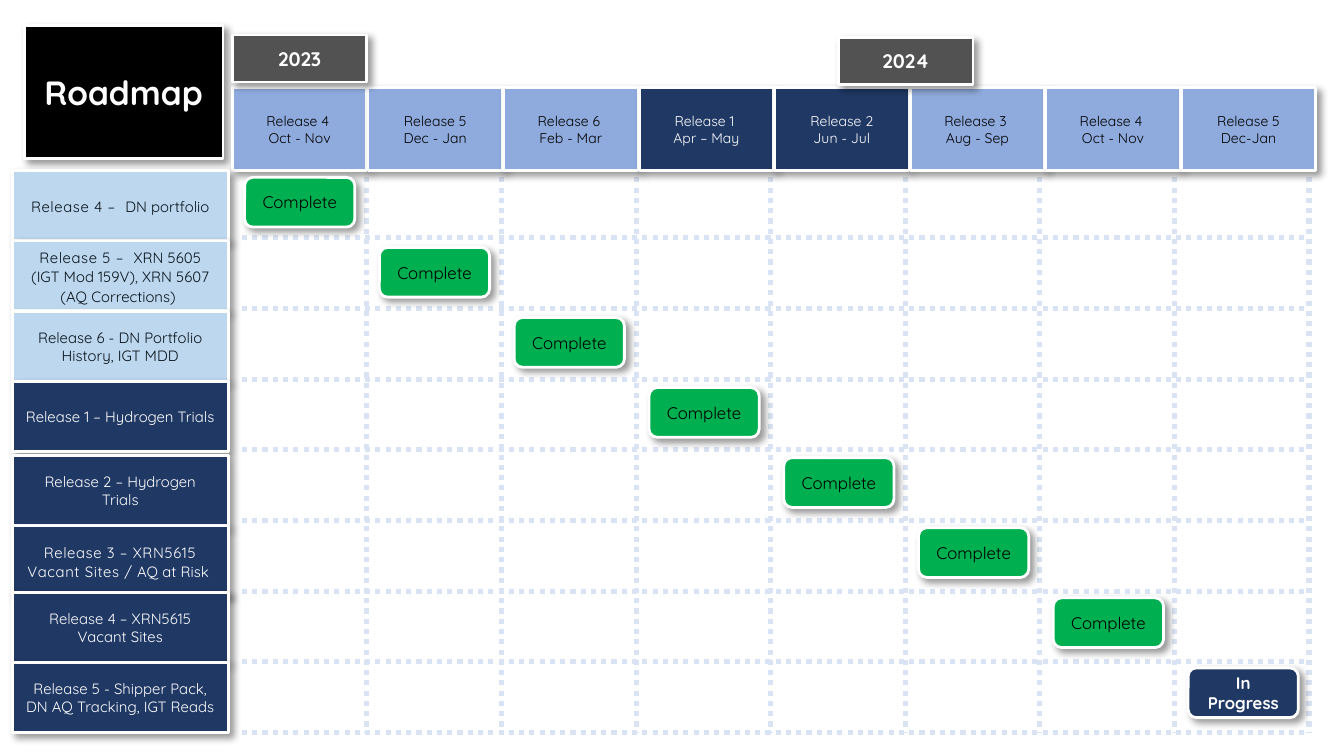
import pptx
import pptx.util
import pptx.dml.color
import pptx.enum.dml
import pptx.enum.shapes
import pptx.enum.text
import pptx.oxml
import pptx.oxml.ns
from lxml import etree

# Content
TITLE = "Roadmap"
YEARS = [("2023", 1.73, 0.26), ("2024", 6.24, 0.28)]
RELEASES = [  # heading, colour
    ("Release 4 \nOct - Nov", "blue"),
    ("Release 5\nDec - Jan", "blue"),
    ("Release 6 \nFeb - Mar", "blue"),
    ("Release 1 \nApr – May", "navy"),
    ("Release 2\nJun - Jul", "navy"),
    ("Release 3 \nAug - Sep", "blue"),
    ("Release 4 \nOct - Nov", "blue"),
    ("Release 5\nDec-Jan", "blue"),
]
WORK = [  # letter-spaced start, rest, colour, downward nudge
    ("Release 4 –  ", "DN portfolio", "sky", 0),
    ("Release 5 –  ", "XRN 5605 (IGT Mod 159V), XRN 5607 (AQ Corrections) ", "sky", 0),
    ("", "Release 6 - DN Portfolio History, IGT MDD", "sky", 0),
    ("", "Release 1 – Hydrogen Trials", "navy", 0),
    ("", "Release 2 – Hydrogen Trials", "navy", 0.03),
    ("Release 3 – XRN5615 Vacant Sites /", " AQ at Risk ", "navy", 0.03),
    ("", "Release 4 – XRN5615 Vacant Sites", "navy", 0),
    ("", "Release 5 - Shipper Pack, DN AQ Tracking, IGT Reads", "navy", 0),
]
STATUSES = ["Complete"] * 7 + ["In Progress"]

# Style
COLOURS = {
    "black": "000000", "white": "FFFFFF", "grey": "525252", "navy": "203864",
    "blue": "8FAADC", "sky": "BDD7EE", "ink": "08131B", "green": "00B050",
    "grid": "DAE3F3",
}
FONT = "Quicksand"
SHADOW = (
    '<a:outerShdw %s blurRad="50800" dist="38100" dir="2700000" algn="tl" rotWithShape="0">'
    '<a:srgbClr val="000000"><a:alpha val="40000"/></a:srgbClr></a:outerShdw>'
    % pptx.oxml.ns.nsdecls("a")
)

# Slide in 16:9
SLIDE_WIDTH = 10
SLIDE_HEIGHT = SLIDE_WIDTH * 9 / 16

# Grid: first position and even step across eight columns and rows
COUNT = len(RELEASES)
GAPS = COUNT - 1
HEADER_LEFT, HEADER_STEP = 1.73, (8.79 - 1.73) / GAPS
LABEL_TOP, LABEL_STEP = 1.27, (4.93 - 1.27) / GAPS
STATUS_LEFT, STATUS_X_STEP = 1.82, (8.84 - 1.82) / GAPS
STATUS_TOP, STATUS_Y_STEP = 1.32, (4.97 - 1.32) / GAPS
LINE_X, LINE_X_STEP = 2.73, (9.74 - 2.73) / GAPS
LINE_Y, LINE_Y_STEP = 1.77, (5.45 - 1.77) / GAPS
GRID_LEFT, GRID_TOP, GRID_RIGHT, GRID_BOTTOM = 1.8, 1.32, 9.74, 5.45

RECTANGLE = pptx.enum.shapes.MSO_SHAPE.RECTANGLE
ROUNDED = pptx.enum.shapes.MSO_SHAPE.ROUNDED_RECTANGLE


def inches(*lengths):
    return [pptx.util.Inches(length) for length in lengths]


def colour(name):
    return pptx.dml.color.RGBColor.from_string(COLOURS[name])


def style_box(shape, text, fill, size, text_colour="white", bold=False):
    """Give a box its fill, white border, shadow and centred text."""
    shape.fill.solid()
    shape.fill.fore_color.rgb = colour(fill)
    shape.line.color.rgb = colour("white")
    shape.line.width = pptx.util.Pt(1.5)
    shape.shadow.inherit = False
    effects = shape._element.spPr.find(pptx.oxml.ns.qn("a:effectLst"))
    effects.append(pptx.oxml.parse_xml(SHADOW))
    frame = shape.text_frame
    frame.text = text
    frame.word_wrap = True
    frame.auto_size = pptx.enum.text.MSO_AUTO_SIZE.NONE
    frame.vertical_anchor = pptx.enum.text.MSO_ANCHOR.MIDDLE
    for paragraph in frame.paragraphs:
        paragraph.alignment = pptx.enum.text.PP_ALIGN.CENTER
        for run in paragraph.runs:
            style_run(run, size, text_colour, bold)


def style_run(run, size, text_colour, bold=False):
    run.font.name = FONT
    run.font.size = pptx.util.Pt(size)
    run.font.bold = bold
    run.font.color.rgb = colour(text_colour)


def add_box(slide, kind, position, *style, **options):
    shape = slide.shapes.add_shape(kind, *inches(*position))
    style_box(shape, *style, **options)
    return shape


def add_grid_line(slide, *ends):
    line = slide.shapes.add_connector(
        pptx.enum.shapes.MSO_CONNECTOR.STRAIGHT, *inches(*ends))
    line.line.color.rgb = colour("grid")
    line.line.width = pptx.util.Pt(2.75)
    line.line.dash_style = pptx.enum.dml.MSO_LINE.ROUND_DOT
    etree.SubElement(line._element.spPr, pptx.oxml.ns.qn("a:effectLst"))


def add_work_label(slide, row, tracked, rest, fill, nudge):
    text_colour = "ink" if fill == "sky" else "white"
    top = LABEL_TOP + row * LABEL_STEP + nudge
    label = add_box(slide, RECTANGLE, (0.09, top, 1.61, 0.52),
                    tracked or rest, fill, 8, text_colour)
    if tracked:
        paragraph = label.text_frame.paragraphs[0]
        paragraph.line_spacing = 1.1
        paragraph.runs[0].font._element.set("spc", "30")
        run = paragraph.add_run()
        run.text = rest
        style_run(run, 8, text_colour)


def main():
    presentation = pptx.Presentation()
    presentation.slide_width, presentation.slide_height = inches(SLIDE_WIDTH, SLIDE_HEIGHT)
    slide = presentation.slides.add_slide(presentation.slide_layouts[5])

    # Title
    title = slide.shapes.title
    title.left, title.top, title.width, title.height = inches(0.18, 0.19, 1.48, 0.99)
    style_box(title, TITLE, "black", 18, bold=True)

    # Dotted grid
    for index in range(COUNT):
        x = LINE_X + index * LINE_X_STEP
        y = LINE_Y + index * LINE_Y_STEP
        add_grid_line(slide, x, GRID_TOP, x, GRID_BOTTOM)
        add_grid_line(slide, GRID_LEFT, y, GRID_RIGHT, y)

    # Release headings, then the years above them
    for column, (heading, fill) in enumerate(RELEASES):
        left = HEADER_LEFT + column * HEADER_STEP
        add_box(slide, RECTANGLE, (left, 0.65, 1, 0.62), heading, fill, 7.5,
                "white" if fill == "navy" else "black")
    for year, left, top in YEARS:
        add_box(slide, RECTANGLE, (left, top, 1, 0.35), year, "grey", 10.5, bold=True)

    # Work labels down the left
    for row, work in enumerate(WORK):
        add_work_label(slide, row, *work)

    # Statuses along the diagonal
    for index, status in enumerate(STATUSES):
        done = status == "Complete"
        position = (STATUS_LEFT + index * STATUS_X_STEP,
                    STATUS_TOP + index * STATUS_Y_STEP, 0.82, 0.37)
        add_box(slide, ROUNDED, position, status, "green" if done else "navy", 9,
                "black" if done else "white", bold=not done)

    presentation.save("out.pptx")


if __name__ == "__main__":
    main()
